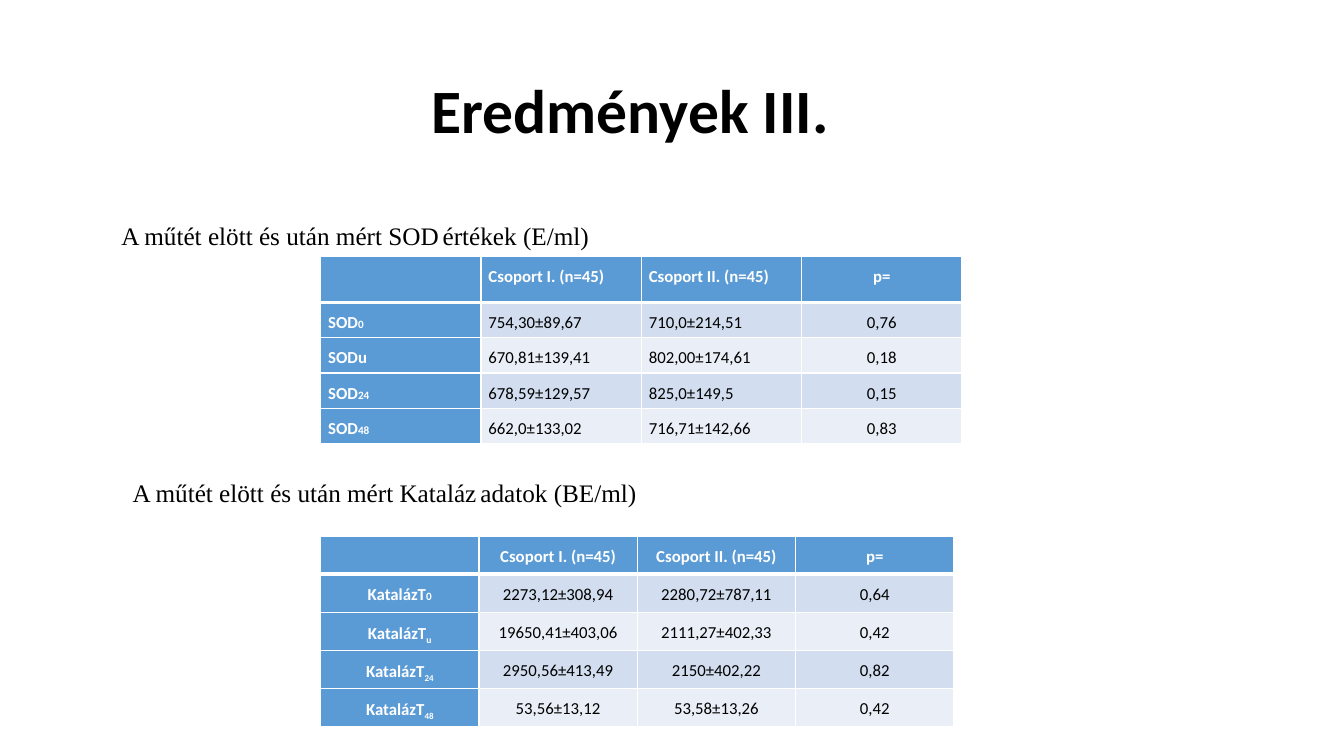
from lxml.etree import SubElement
from pptx import Presentation
from pptx.dml.color import RGBColor
from pptx.enum.text import MSO_ANCHOR, PP_ALIGN
from pptx.oxml.ns import qn
from pptx.util import Cm, Pt

WHITE = RGBColor(0xFF, 0xFF, 0xFF)
BLACK = RGBColor(0x00, 0x00, 0x00)
HEADER_BLUE = RGBColor(0x5B, 0x9B, 0xD5)
BANDS = (RGBColor(0xD2, 0xDE, 0xEF), RGBColor(0xEA, 0xEF, 0xF7))

GROUPS = ["Csoport I. (n=45)", "Csoport II. (n=45)", "p="]
SOD_ROWS = [
    ([("SOD", 12, 0), ("0", 8, 0)], ["754,30±89,67", "710,0±214,51", "0,76"]),
    ([("SODu", 12, 0)], ["670,81±139,41", "802,00±174,61", "0,18"]),
    ([("SOD", 12, 0), ("24", 8, 0)], ["678,59±129,57", "825,0±149,5", "0,15"]),
    ([("SOD", 12, 0), ("48", 8, 0)], ["662,0±133,02", "716,71±142,66", "0,83"]),
]
CATALASE_ROWS = [
    ([("KatalázT", 12, 0), ("0", 8, 0)], ["2273,12±308,94", "2280,72±787,11", "0,64"]),
    ([("KatalázT", 12, 0), ("u", 12, -25)], ["19650,41±403,06", "2111,27±402,33", "0,42"]),
    ([("KatalázT", 12, 0), ("24", 11, -25)], ["2950,56±413,49", "2150±402,22", "0,82"]),
    ([("KatalázT", 12, 0), ("48", 11, -25)], ["53,56±13,12", "53,58±13,26", "0,42"]),
]


class ResultsSlide:
    """Draws titles, captions and result tables in one shared style."""

    def __init__(self, slide, body_font="Calibri", caption_font="Times New Roman"):
        self.slide = slide
        self.body_font = body_font
        self.caption_font = caption_font

    def add_runs(self, paragraph, pieces, font_name, color, bold=False):
        for text, size, baseline in pieces:
            run = paragraph.add_run()
            run.text = text
            run.font.name = font_name
            run.font.size = Pt(size)
            run.font.bold = bold
            run.font.color.rgb = color
            if baseline:
                run.font._element.set("baseline", str(baseline * 1000))

    def text_frame(self, left, top, width, height):
        box = self.slide.shapes.add_textbox(Cm(left), Cm(top), Cm(width), Cm(height))
        box.text_frame.word_wrap = True
        return box.text_frame

    def title(self, text, left, top, width, height, indent):
        frame = self.text_frame(left, top, width, height)
        frame.vertical_anchor = MSO_ANCHOR.MIDDLE
        frame.margin_left = Cm(indent)
        heading = frame.paragraphs[0]
        heading.line_spacing = 0.9
        self.add_runs(heading, [(text, 44, 0)], self.body_font, BLACK, bold=True)

    def caption(self, subject, unit, left, top, width, height):
        line = self.text_frame(left, top, width, height).paragraphs[0]
        line.alignment = PP_ALIGN.CENTER
        line.line_spacing = 1.5
        line.space_after = Pt(8)
        pieces = [(subject, 18, 0), (" ", 10.5, 0), (unit, 18, 0)]
        self.add_runs(line, pieces, self.caption_font, BLACK)

    def borders(self, cell, row):
        widths = {"L": 1, "R": 1, "T": 3 if row == 1 else 1, "B": 3 if row == 0 else 1}
        properties = cell._tc.get_or_add_tcPr()
        for side, width in widths.items():
            edge = SubElement(properties, qn(f"a:ln{side}"), w=str(Pt(width)))
            fill = SubElement(edge, qn("a:solidFill"))
            SubElement(fill, qn("a:srgbClr"), val=str(WHITE))

    def cell(self, cell, row, column, pieces, alignment):
        is_heading = row == 0 or column == 0
        self.borders(cell, row)
        cell.fill.solid()
        cell.fill.fore_color.rgb = HEADER_BLUE if is_heading else BANDS[(row - 1) % 2]
        cell.margin_left = cell.margin_right = Cm(0.19)
        cell.margin_top = cell.margin_bottom = 0
        paragraph = cell.text_frame.paragraphs[0]
        paragraph.alignment = alignment
        paragraph.line_spacing = 1.5
        paragraph.font.size = Pt(12)
        color = WHITE if is_heading else BLACK
        self.add_runs(paragraph, pieces, self.body_font, color, is_heading)

    def table(self, rows, left, top, column_width, row_heights, alignments):
        lines = [([], GROUPS)] + rows
        table = self.slide.shapes.add_table(
            len(lines), len(alignments), Cm(left), Cm(top),
            Cm(column_width * len(alignments)), Cm(sum(row_heights)),
        ).table
        for column in table.columns:
            column.width = Cm(column_width)
        for row, (label, values) in enumerate(lines):
            table.rows[row].height = Cm(row_heights[row])
            contents = [label] + [[(value, 12, 0)] for value in values]
            for column, pieces in enumerate(contents):
                self.cell(table.cell(row, column), row, column, pieces, alignments[column])


def main():
    presentation = Presentation()
    presentation.slide_width = Cm(33.87)
    presentation.slide_height = Cm(19.05)
    results = ResultsSlide(presentation.slides.add_slide(presentation.slide_layouts[6]))

    results.title("Eredmények III.", 2.33, 1.01, 29.21, 3.68, indent=8.55)
    results.table(SOD_ROWS, 8.08, 6.45, 4.04, [1.17] + [0.89] * 4,
                  [PP_ALIGN.JUSTIFY] * 3 + [PP_ALIGN.CENTER])
    results.caption("A műtét elött és után mért SOD", "értékek (E/ml)",
                    2.74, 5.05, 12.42, 1.42)
    results.table(CATALASE_ROWS, 8.08, 13.51, 3.99, [0.96] * 5, [PP_ALIGN.CENTER] * 4)
    results.caption("A műtét elött és után mért Kataláz", "adatok (BE/ml)",
                    1.22, 11.53, 16.94, 2.84)
    presentation.save("out.pptx")


if __name__ == "__main__":
    main()
